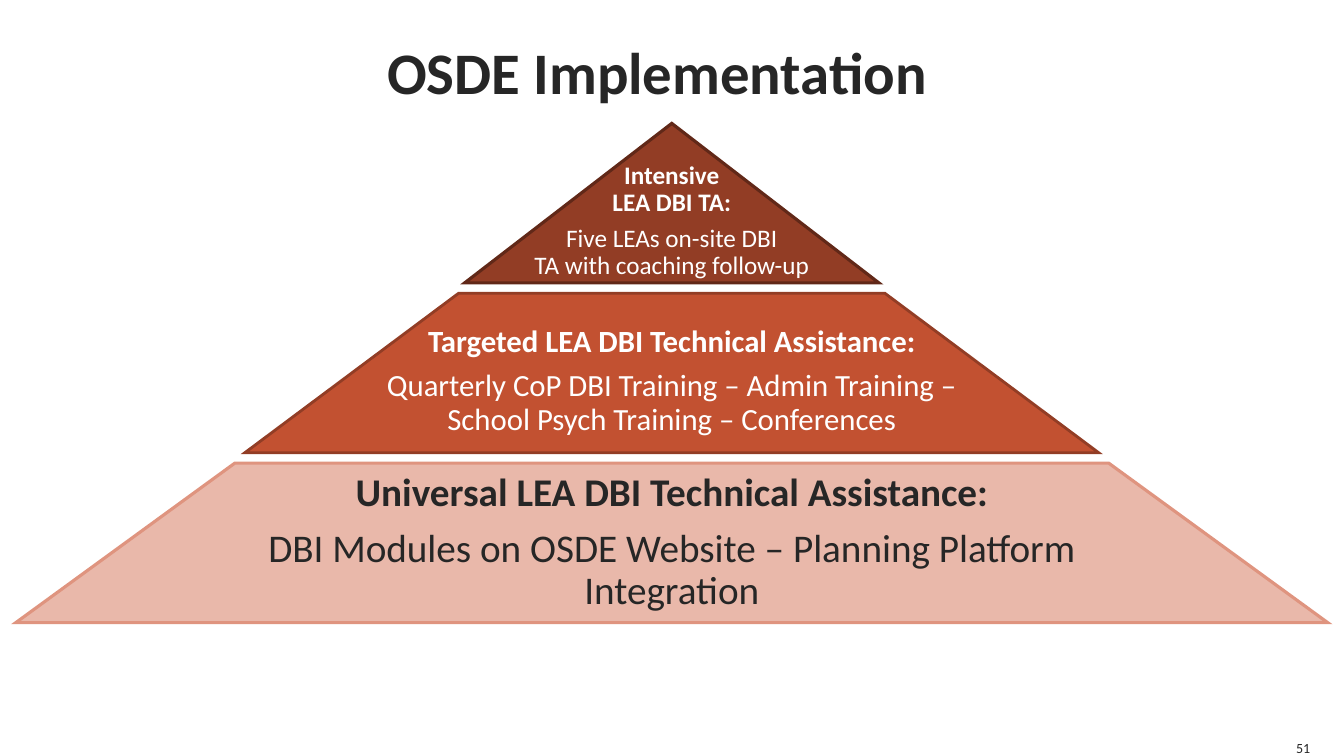
from lxml import etree
from pptx import Presentation
from pptx import util as u
from pptx.dml.color import RGBColor
from pptx.enum import text
from pptx.oxml.ns import qn

COLOURS = {
    "ink": "262626", "white": "FFFFFF",
    "intensive": "923D25", "intensive_edge": "612818",
    "targeted": "C25131", "targeted_edge": "923D25",
    "universal": "E9B8AA", "universal_edge": "DF947F",
}
CENTRE = 16.93
FIRST_TOP, TIER_HEIGHT, TIER_PITCH = 3.11, 4.02, 4.28

# name, half widths at top and bottom, edge width, margins (left/right, top, bottom),
# text size, text colour, heading, detail
TIERS = [
    ("intensive", 0, 5.22, 2.25, (0.05, 0.97, 0.05), 18, "white",
     "Intensive\vLEA DBI TA:",
     "Five LEAs on-site DBI\vTA with coaching follow-up"),
    ("targeted", 5.37, 10.76, 2, (3.56, 0.51, 0.08), 22, "white",
     "Targeted LEA DBI Technical Assistance:",
     "Quarterly CoP DBI Training – Admin Training – School Psych Training – Conferences"),
    ("universal", 11.01, 16.53, 2.25, (4.32, 0.1, 0.1), 28, "ink",
     "Universal LEA DBI Technical Assistance:",
     "DBI Modules on OSDE Website – Planning Platform Integration"),
]


def colour(name):
    return RGBColor.from_string(COLOURS[name])


def set_margins(frame, side, top, bottom):
    frame.margin_left = frame.margin_right = u.Cm(side)
    frame.margin_top, frame.margin_bottom = u.Cm(top), u.Cm(bottom)


def write(paragraph, words, size, ink, align, bold=False):
    paragraph.text = words
    paragraph.alignment = align
    for run in paragraph.runs:
        run.font.name = "Calibri"
        run.font.size = u.Pt(size)
        run.font.bold = bold
        run.font.color.rgb = colour(ink)


def add_label(slide, box, words, size, align, anchor, bold=False, wrap=True):
    frame = slide.shapes.add_textbox(*map(u.Cm, box)).text_frame
    frame.word_wrap = wrap
    frame.vertical_anchor = anchor
    set_margins(frame, 0, 0, 0)
    write(frame.paragraphs[0], words, size, "ink", align, bold)


def add_tier(slide, top, name, half_top, half_bottom, edge, margins,
             size, ink, heading, detail):
    """Draw one level of the pyramid with its bold heading and detail."""
    bottom = top + TIER_HEIGHT
    corners = [(CENTRE - half_top, top), (CENTRE + half_top, top),
               (CENTRE + half_bottom, bottom), (CENTRE - half_bottom, bottom)]
    start, *others = [(u.Cm(x), u.Cm(y)) for x, y in corners]
    outline = slide.shapes.build_freeform(*start)
    outline.add_line_segments(others, close=True)
    tier = outline.convert_to_shape()
    tier.shadow.inherit = False
    tier.fill.solid()
    tier.fill.fore_color.rgb = colour(name)
    tier.line.color.rgb = colour(name + "_edge")
    tier.line.width = u.Pt(edge)
    etree.SubElement(tier.line._get_or_add_ln(), qn("a:miter"), lim="800000")

    frame = tier.text_frame
    frame.word_wrap = True
    frame.vertical_anchor = text.MSO_ANCHOR.MIDDLE
    set_margins(frame, *margins)
    for paragraph, words, bold in ((frame.paragraphs[0], heading, True),
                                   (frame.add_paragraph(), detail, False)):
        write(paragraph, words, size, ink, text.PP_ALIGN.CENTER, bold)
        paragraph.line_spacing = 0.9
        paragraph.space_after = u.Pt(size * 0.35)


def main():
    deck = Presentation()
    deck.slide_width, deck.slide_height = u.Cm(33.87), u.Cm(19.05)
    slide = deck.slides.add_slide(deck.slide_layouts[6])
    add_label(slide, (1.27, 0, 30.58, 3.56), "OSDE Implementation", 42,
              text.PP_ALIGN.CENTER, text.MSO_ANCHOR.MIDDLE, bold=True)
    for level, tier in enumerate(TIERS):
        add_tier(slide, FIRST_TOP + level * TIER_PITCH, *tier)
    add_label(slide, (32.59, 18.62, 0.43, 0.43), "51", 10,
              text.PP_ALIGN.RIGHT, text.MSO_ANCHOR.BOTTOM, wrap=False)
    deck.save("out.pptx")


if __name__ == "__main__":
    main()
